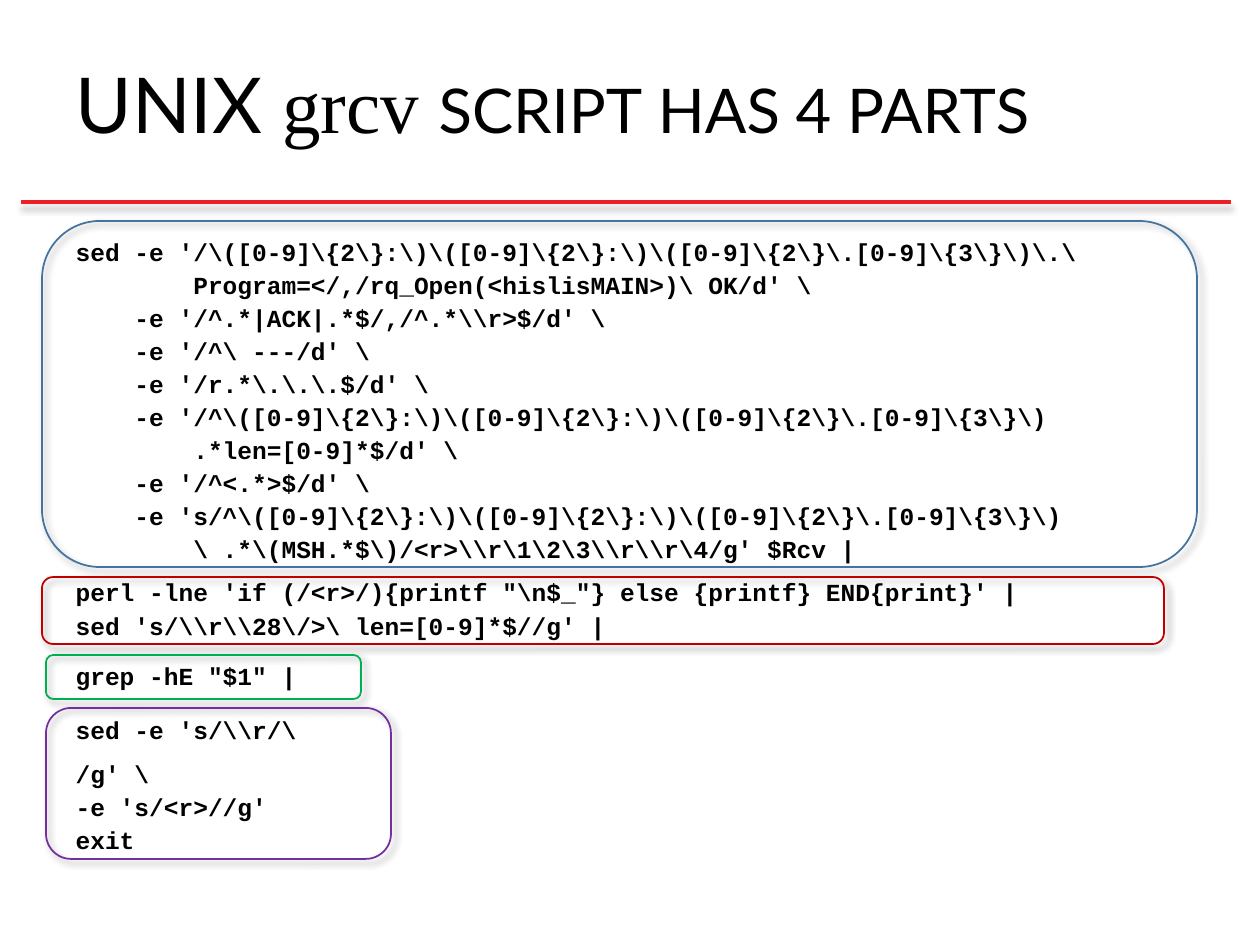
import pptx
import pptx.dml.color
import pptx.enum.shapes
import pptx.enum.text
import pptx.oxml
import pptx.oxml.ns
import pptx.util

PX = 914400 / 126

SCRIPT_LINES = r"""sed -e '/\([0-9]\{2\}:\)\([0-9]\{2\}:\)\([0-9]\{2\}\.[0-9]\{3\}\)\.\
        Program=</,/rq_Open(<hislisMAIN>)\ OK/d' \
    -e '/^.*|ACK|.*$/,/^.*\\r>$/d' \
    -e '/^\ ---/d' \
    -e '/r.*\.\.\.$/d' \
    -e '/^\([0-9]\{2\}:\)\([0-9]\{2\}:\)\([0-9]\{2\}\.[0-9]\{3\}\)
        .*len=[0-9]*$/d' \
    -e '/^<.*>$/d' \
    -e 's/^\([0-9]\{2\}:\)\([0-9]\{2\}:\)\([0-9]\{2\}\.[0-9]\{3\}\)
        \ .*\(MSH.*$\)/<r>\\r\1\2\3\\r\\r\4/g' $Rcv |
perl -lne 'if (/<r>/){printf "\n$_"} else {printf} END{print}' |
sed 's/\\r\\28\/>\ len=[0-9]*$//g' |
grep -hE "$1" |
sed -e 's/\\r/\
/g' \
-e 's/<r>//g'
exit""".split("\n")

# Line number: (space before in points, line spacing)
SPACING = {0: (0, 1.0), 10: (10, 0.9), 12: (12, 1.0), 13: (14, 1.0), 14: (10, 0.9)}
USUAL_SPACING = (2, 1.0)


def px(length):
    return pptx.util.Emu(round(length * PX))


def color(value):
    return pptx.dml.color.RGBColor.from_string(value)


class SlideBuilder:
    black = "000000"

    def __init__(self, presentation):
        self.slide = presentation.slides.add_slide(presentation.slide_layouts[1])

    def place(self, shape, left, top, width, height):
        shape.left, shape.top = px(left), px(top)
        shape.width, shape.height = px(width), px(height)

    def run(self, paragraph, text, size, font, bold=False):
        run = paragraph.add_run()
        run.text = text
        run.font.size = pptx.util.Pt(size)
        run.font.name = font
        run.font.bold = bold
        run.font.color.rgb = color(self.black)
        return run

    def shadow(self, shape, degrees):
        namespace = pptx.oxml.ns.nsdecls("a")
        shape._element.spPr.append(pptx.oxml.parse_xml(
            f'<a:effectLst {namespace}><a:outerShdw blurRad="50800" dist="38100" '
            f'dir="{degrees * 60000}" algn="tl" rotWithShape="0">'
            f'<a:srgbClr val="{self.black}"><a:alpha val="40000"/></a:srgbClr>'
            '</a:outerShdw></a:effectLst>'))

    def rule(self, left, right, y, line_color):
        line = self.slide.shapes.add_connector(
            pptx.enum.shapes.MSO_CONNECTOR.STRAIGHT, px(left), px(y), px(right), px(y))
        line.line.color.rgb = color(line_color)
        line.line.width = pptx.util.Pt(2.25)
        self.shadow(line, 90)

    def title(self, box, parts):
        shape = self.slide.shapes.title
        self.place(shape, *box)
        frame = shape.text_frame
        frame.auto_size = pptx.enum.text.MSO_AUTO_SIZE.NONE
        frame.vertical_anchor = pptx.enum.text.MSO_ANCHOR.MIDDLE
        paragraph = frame.paragraphs[0]
        paragraph.alignment = pptx.enum.text.PP_ALIGN.LEFT
        paragraph.line_spacing = 0.9
        for text, font, small_caps in parts:
            run = self.run(paragraph, text, 44, font)
            if small_caps:
                run.font._element.set("cap", "small")

    def code(self, box, lines):
        shape = self.slide.placeholders[1]
        self.place(shape, *box)
        frame = shape.text_frame
        frame.auto_size = pptx.enum.text.MSO_AUTO_SIZE.NONE
        for number, text in enumerate(lines):
            paragraph = frame.add_paragraph() if number else frame.paragraphs[0]
            before, paragraph.line_spacing = SPACING.get(number, USUAL_SPACING)
            paragraph.space_before = pptx.util.Pt(before)
            properties = paragraph._element.get_or_add_pPr()
            properties.set("marL", "0")
            properties.set("indent", "0")
            properties.append(pptx.oxml.parse_xml(
                f'<a:buNone {pptx.oxml.ns.nsdecls("a")}/>'))
            self.run(paragraph, text, 14, "Courier New", bold=True)

    def outline(self, box, line_color):
        shape = self.slide.shapes.add_shape(
            pptx.enum.shapes.MSO_SHAPE.ROUNDED_RECTANGLE, *map(px, box))
        shape.fill.background()
        shape.line.color.rgb = color(line_color)
        shape.line.width = pptx.util.Pt(1)
        self.shadow(shape, 45)


def main():
    presentation = pptx.Presentation()
    presentation.slide_width = px(1260)
    presentation.slide_height = px(945)
    builder = SlideBuilder(presentation)

    # Heading and red rule
    builder.rule(21, 1231, 202, "EC1F27")
    builder.title((63, 38, 1134, 142), [
        ("UNIX ", "Lato", False),
        ("grcv ", "Times New Roman", False),
        ("script has 4 parts", "Lato", True),
    ])

    # Script listing
    builder.code((63, 231, 1166, 683), SCRIPT_LINES)

    # Frames around the four parts
    for box, line_color in [
        ((42, 221, 1155, 346), "43739E"),
        ((42, 577, 1122, 67), "C00000"),
        ((46, 655, 315, 44), "00B050"),
        ((46, 708, 345, 151), "7030A0"),
    ]:
        builder.outline(box, line_color)

    presentation.save("out.pptx")


if __name__ == "__main__":
    main()
